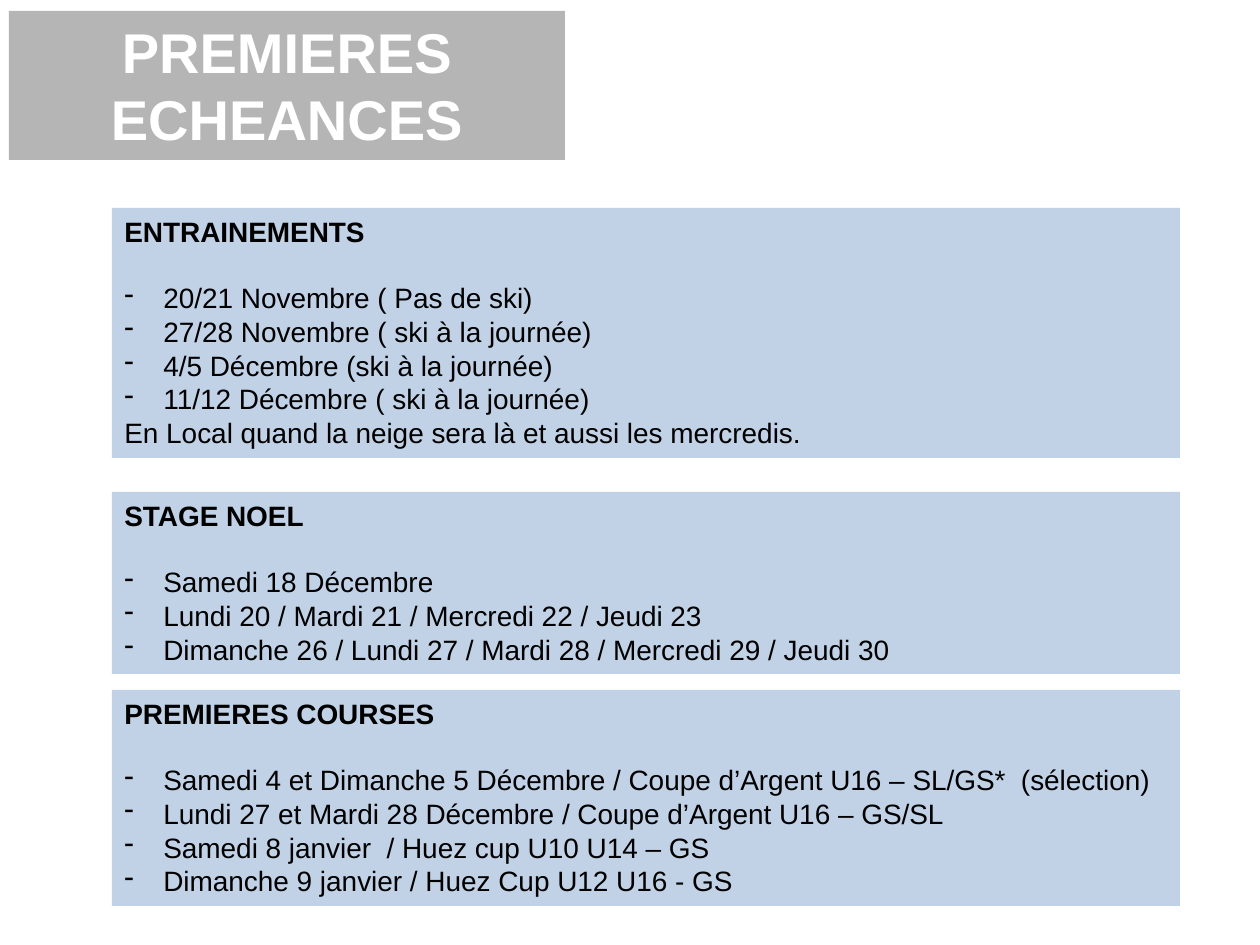
from pptx import Presentation
from pptx.dml.color import RGBColor as RGB
from pptx.enum.shapes import MSO_SHAPE as Shape
from pptx.enum.text import MSO_ANCHOR as Anchor, MSO_AUTO_SIZE as Auto, PP_ALIGN as Align
from pptx.oxml.ns import qn
from pptx.util import Emu, Pt
from lxml.etree import SubElement as Sub

TITLE = "PREMIERES ECHEANCES"
CARDS = [
    (208, 250, "ENTRAINEMENTS", [
        "20/21 Novembre ( Pas de ski)",
        "27/28 Novembre ( ski à la journée)",
        "4/5 Décembre (ski à la journée)",
        "11/12 Décembre ( ski à la journée)",
    ], "En Local quand la neige sera là et aussi les mercredis."),
    (492, 182, "STAGE NOEL", [
        "Samedi 18 Décembre",
        "Lundi 20 / Mardi 21 / Mercredi 22 / Jeudi 23",
        "Dimanche 26 / Lundi 27 / Mardi 28 / Mercredi 29 / Jeudi 30",
    ], None),
    (690, 216, "PREMIERES COURSES", [
        "Samedi 4 et Dimanche 5 Décembre / Coupe d’Argent U16 – SL/GS*  (sélection)",
        "Lundi 27 et Mardi 28 Décembre / Coupe d’Argent U16 – GS/SL",
        "Samedi 8 janvier  / Huez cup U10 U14 – GS",
        "Dimanche 9 janvier / Huez Cup U12 U16 - GS",
    ], None),
]
THEME = dict(font="Arial", card="95B3D7", band="808080", dark="000000",
             light="FFFFFF", alpha=58, head=32, body=16, gap=19)
LEFT, WIDE, INDENT = 112, 1068, 39


def px(n):
    return Emu(n * 914400 // 126)


def box(slide, x, y, w, h, fill):
    shape = slide.shapes.add_shape(Shape.RECTANGLE, px(x), px(y), px(w), px(h))
    shape.shadow.inherit = False
    shape.line.fill.background()
    shape.fill.solid()
    shape.fill.fore_color.rgb = RGB.from_string(THEME[fill])
    color = shape.fill._xPr.find(".//" + qn("a:srgbClr"))
    Sub(color, qn("a:alpha"), val=str(THEME["alpha"] * 1000))
    frame = shape.text_frame
    frame.word_wrap = True
    frame.auto_size = Auto.SHAPE_TO_FIT_TEXT
    frame.vertical_anchor = Anchor.TOP
    return frame


def write(par, text, size, color, align, bold=False, dash=False):
    par.text = text
    par.alignment = align
    if dash:
        props = par._p.get_or_add_pPr()
        props.set("marL", str(px(INDENT)))
        props.set("indent", str(-px(INDENT)))
        Sub(props, qn("a:buFontTx"))
        Sub(props, qn("a:buChar"), char="-")
    font = par.font
    font.name, font.size, font.bold = THEME["font"], Pt(THEME[size]), bold
    font.color.rgb = RGB.from_string(THEME[color])


def card(slide, top, high, head, dates, note):
    frame = box(slide, LEFT, top, WIDE, high, "card")
    first = frame.paragraphs[0]
    write(first, head, "body", "dark", Align.JUSTIFY, bold=True)
    first.space_after = Pt(THEME["gap"])
    for date in dates:
        write(frame.add_paragraph(), date, "body", "dark", Align.JUSTIFY, dash=True)
    if note:
        write(frame.add_paragraph(), note, "body", "dark", Align.JUSTIFY)


def main():
    deck = Presentation()
    deck.slide_width, deck.slide_height = px(1260), px(945)
    slide = deck.slides.add_slide(deck.slide_layouts[6])
    band = box(slide, 9, 11, 556, 149, "band")
    write(band.paragraphs[0], TITLE, "head", "light", Align.CENTER, bold=True)
    for item in CARDS:
        card(slide, *item)
    deck.save("out.pptx")


if __name__ == "__main__":
    main()
